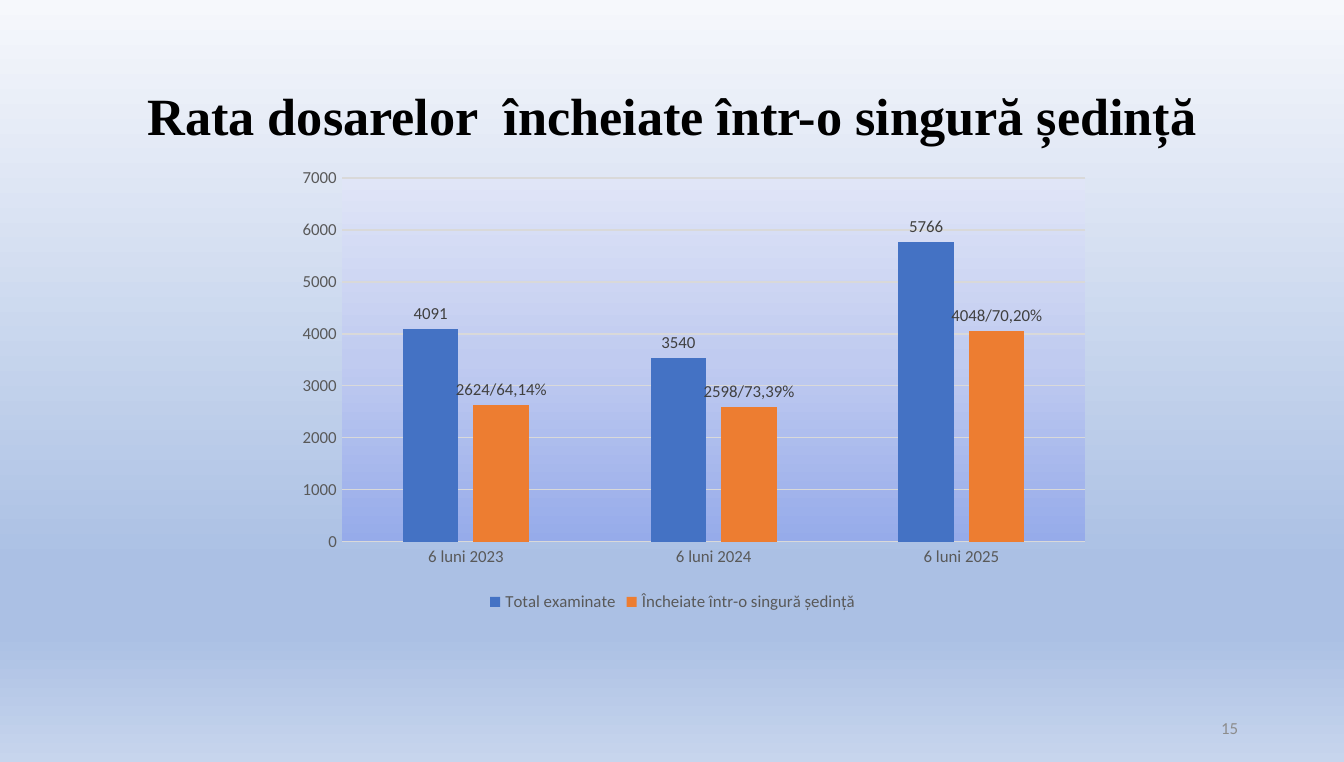
from lxml.etree import SubElement
from pptx import Presentation
from pptx.chart.data import CategoryChartData
from pptx.dml.color import RGBColor
from pptx.enum.chart import XL_CHART_TYPE, XL_LABEL_POSITION, XL_LEGEND_POSITION, XL_TICK_MARK
from pptx.enum.text import MSO_ANCHOR, PP_ALIGN
from pptx.oxml import parse_xml
from pptx.oxml.ns import nsdecls, qn
from pptx.util import Pt

COLORS = {
    "title": "000000", "number": "8C8C8C", "axis": "595959", "label": "404040",
    "grid": "D9D9D9", "total": "4472C4", "single": "ED7D31",
}
BACKGROUND = [(0, "F6F8FC"), (74, "ABC0E4"), (83, "ABC0E4"), (100, "C7D5ED")]
PLOT_FILL = [(0, "96ABEA"), (50, "C0CBF0"), (100, "E0E5F7")]


def gradient(stops, angle):
    gs = "".join(f'<a:gs pos="{pos * 1000}"><a:srgbClr val="{color}"/></a:gs>'
                 for pos, color in stops)
    return parse_xml(f'<a:gradFill {nsdecls("a")} rotWithShape="1"><a:gsLst>{gs}</a:gsLst>'
                     f'<a:lin ang="{angle * 60000}" scaled="0"/></a:gradFill>')


class SlideBuilder:
    def __init__(self, slide, font="Calibri"):
        self.s = slide
        self.font = font

    def style(self, font, size, color, name=None, bold=False):
        font.name = name or self.font
        font.size = Pt(size)
        font.bold = bold
        font.color.rgb = RGBColor.from_string(COLORS[color])

    def background(self, stops, angle):
        self.s.background.fill.solid()
        solid = self.s.element.find(".//" + qn("p:bgPr")).find(qn("a:solidFill"))
        solid.getparent().replace(solid, gradient(stops, angle))

    def text(self, box, text, align, size, color, name=None, bold=False):
        tf = self.s.shapes.add_textbox(*map(Pt, box)).text_frame
        tf.word_wrap = True
        tf.vertical_anchor = MSO_ANCHOR.MIDDLE
        p = tf.paragraphs[0]
        p.alignment = align
        r = p.add_run()
        r.text = text
        self.style(r.font, size, color, name, bold)

    def column_chart(self, box, cats, series):
        data = CategoryChartData()
        data.categories = cats
        for name, values, _, _ in series:
            data.add_series(name, values)
        chart = self.s.shapes.add_chart(
            XL_CHART_TYPE.COLUMN_CLUSTERED, *map(Pt, box), data).chart
        chart.has_title = False
        chart.font.name = self.font
        chart.font.size = Pt(10)

        # Legend
        chart.has_legend = True
        chart.legend.position = XL_LEGEND_POSITION.BOTTOM
        chart.legend.include_in_layout = False
        self.style(chart.legend.font, 9, "axis")

        # Axes
        cat_axis, val_axis = chart.category_axis, chart.value_axis
        for axis in (cat_axis, val_axis):
            axis.major_tick_mark = axis.minor_tick_mark = XL_TICK_MARK.NONE
            self.style(axis.tick_labels.font, 9, "axis")
        val_axis.minimum_scale, val_axis.maximum_scale = 0, 7000
        val_axis.major_unit = 1000
        val_axis.format.line.fill.background()
        for line in (cat_axis.format.line, val_axis.major_gridlines.format.line):
            line.width = Pt(0.75)
            line.color.rgb = RGBColor.from_string(COLORS["grid"])

        # Columns and labels
        plot = chart.plots[0]
        plot.vary_by_categories = False
        plot.gap_width, plot.overlap = 219, -27
        for ser, (_, _, color, captions) in zip(plot.series, series):
            ser.format.fill.solid()
            ser.format.fill.fore_color.rgb = RGBColor.from_string(COLORS[color])
            labels = ser.data_labels
            labels.show_value = True
            labels.position = XL_LABEL_POSITION.OUTSIDE_END
            self.style(labels.font, 9, "label")
            for i, caption in enumerate(captions):
                label = ser.points[i].data_label
                r = label.text_frame.paragraphs[0].add_run()
                r.text = caption
                self.style(r.font, 9, "label")
                label.position = XL_LABEL_POSITION.OUTSIDE_END
        return chart

    def plot_area(self, chart, frame, stops, angle):
        area = chart.element.find(".//" + qn("c:plotArea"))
        for old in area.findall(qn("c:layout")):
            area.remove(old)
        layout = parse_xml(f'<c:layout {nsdecls("c")}><c:manualLayout/></c:layout>')
        settings = [("layoutTarget", "inner"), ("xMode", "edge"), ("yMode", "edge"),
                    *zip("xywh", frame)]
        for tag, value in settings:
            SubElement(layout[0], qn(f"c:{tag}")).set("val", str(value))
        area.insert(0, layout)
        SubElement(area, qn("c:spPr")).append(gradient(stops, angle))


def main():
    prs = Presentation()
    prs.slide_width, prs.slide_height = Pt(720), Pt(408)
    sb = SlideBuilder(prs.slides.add_slide(prs.slide_layouts[6]))
    sb.background(BACKGROUND, 90)

    # Title and slide number
    sb.text((36, 23.75, 648, 75), "Rata dosarelor  încheiate într-o singură ședință",
            PP_ALIGN.CENTER, 28, "title", "Times New Roman", True)
    sb.text((508.3, 378.7, 162, 21.6), "15", PP_ALIGN.RIGHT, 9, "number")

    # Chart
    chart = sb.column_chart(
        (139, 77.75, 442.8, 252.7),
        [f"6 luni {year}" for year in (2023, 2024, 2025)],
        [("Total examinate", (4091, 3540, 5766), "total", ()),
         ("Încheiate într-o singură ședință", (2624, 2598, 4048), "single",
          ("2624/64,14%", "2598/73,39%", "4048/70,20%"))])
    sb.plot_area(chart, (0.1, 0.07, 0.9, 0.77), PLOT_FILL, 270)

    prs.save("out.pptx")


if __name__ == "__main__":
    main()
